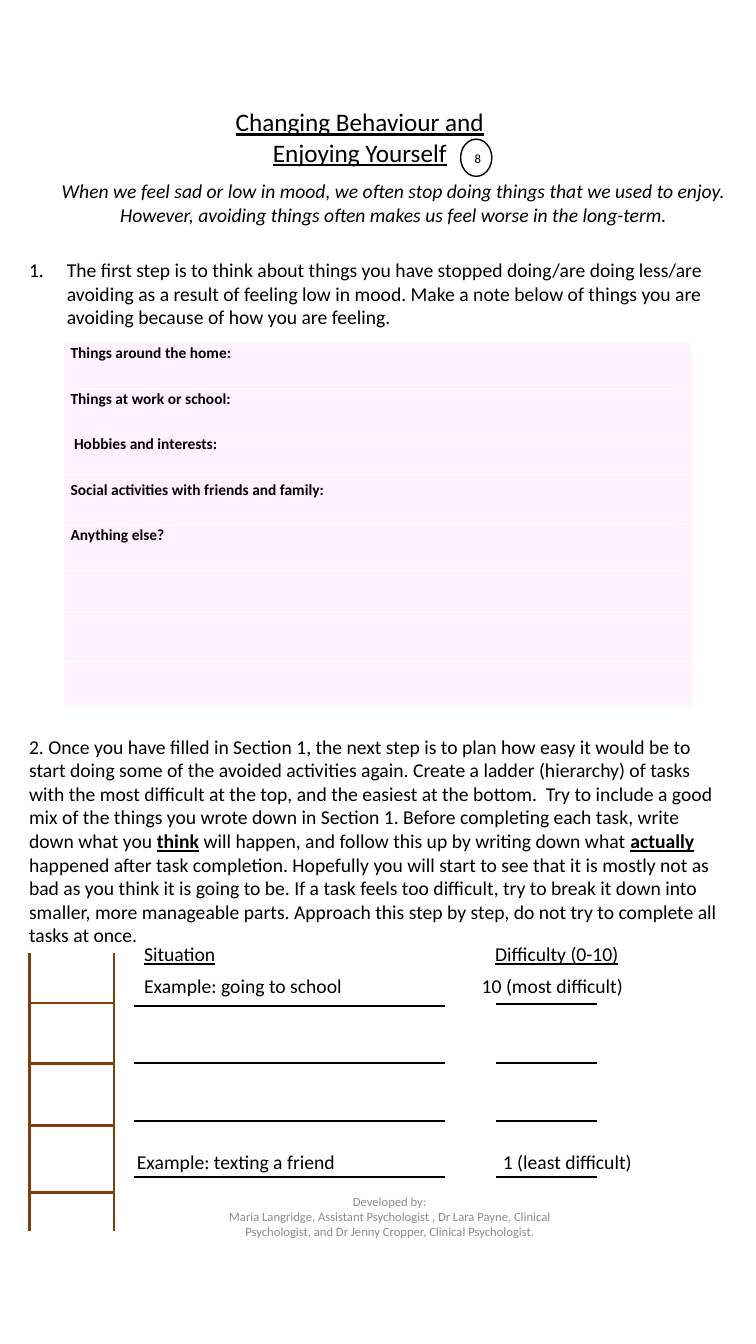
from lxml import etree
from pptx import Presentation
from pptx.dml.color import RGBColor
from pptx.enum import shapes, text
from pptx.oxml import ns
from pptx.util import Pt

BLACK = RGBColor(0x00, 0x00, 0x00)
GREY = RGBColor(0x8C, 0x8C, 0x8C)
BROWN = RGBColor(0x84, 0x3C, 0x0B)
PINK = RGBColor(0xFF, 0xCC, 0xFF)
CENTER = text.PP_ALIGN.CENTER

deck = Presentation()
deck.slide_width, deck.slide_height = Pt(540), Pt(960)
page = deck.slides.add_slide(deck.slide_layouts[6])


def add_text(left, top, width, height, lines, size=14, color=BLACK, align=None):
    box = page.shapes.add_textbox(Pt(left), Pt(top), Pt(width), Pt(height))
    frame = box.text_frame
    frame.word_wrap = True
    frame.text = lines
    for para in frame.paragraphs:
        para.alignment = align
        para.font.name = "Calibri"
        para.font.size = Pt(size)
        para.font.color.rgb = color
    return frame


def add_line(x1, y1, x2, y2, color, width):
    line = page.shapes.add_connector(
        shapes.MSO_CONNECTOR.STRAIGHT, Pt(x1), Pt(y1), Pt(x2), Pt(y2))
    line.line.color.rgb = color
    line.line.width = Pt(width)
    etree.SubElement(line._element.spPr, ns.qn("a:effectLst"))


# Title and introduction
title = add_text(133.9, 72.7, 246.2, 51, "Changing Behaviour and Enjoying Yourself",
                 size=18, align=CENTER)
title.paragraphs[0].font.underline = True
intro = add_text(
    24.5, 124.6, 513.4, 41,
    "When we feel sad or low in mood, we often stop doing things that we used to enjoy. "
    "However, avoiding things often makes us feel worse in the long-term.", align=CENTER)
intro.paragraphs[0].font.italic = True

# Circled page number
number = add_text(324.7, 93.6, 25.9, 39.6, "8", size=9, align=text.PP_ALIGN.RIGHT)
number.vertical_anchor = text.MSO_ANCHOR.MIDDLE
circle = page.shapes.add_shape(
    shapes.MSO_SHAPE.OVAL, Pt(329), Pt(99.4), Pt(22.3), Pt(26.6))
circle.shadow.inherit = False
circle.fill.background()
circle.line.color.rgb = BLACK
circle.line.width = Pt(1)

# Step 1, numbered
step_one = add_text(
    13.7, 180.7, 513.4, 80,
    "The first step is to think about things you have stopped doing/are doing less/are "
    "avoiding as a result of feeling low in mood. Make a note below of things you are "
    "avoiding because of how you are feeling.")
properties = step_one.paragraphs[0]._p.get_or_add_pPr()
properties.set("marL", str(Pt(27)))
properties.set("indent", str(Pt(-27)))
numbering = etree.Element(ns.qn("a:buAutoNum"), type="arabicPeriod")
properties.insert(0, numbering)

# Table of avoided activities
headings = ["Things around the home:", "Things at work or school:",
            " Hobbies and interests:", "Social activities with friends and family:",
            "Anything else?", "", "", ""]
table = page.shapes.add_table(
    len(headings), 1, Pt(45.4), Pt(244.8), Pt(448.6), Pt(32.5 * len(headings))).table
for row, heading in enumerate(headings):
    cell = table.cell(row, 0)
    cell.fill.solid()
    cell.fill.fore_color.rgb = PINK
    tint = cell._tc.tcPr.find(".//" + ns.qn("a:srgbClr"))
    etree.SubElement(tint, ns.qn("a:alpha"), val="26000")
    if heading:
        cell.margin_left = cell.margin_right = Pt(5)
        cell.margin_top = cell.margin_bottom = 0
        cell.text = heading
        para = cell.text_frame.paragraphs[0]
        para.line_spacing = 1.07
        para.font.name = "Calibri"
        para.font.size = Pt(11)
        para.font.bold = True
        para.font.color.rgb = BLACK

# Step 2, with stressed words
step_two = add_text(13.7, 521.3, 513.4, 181.4, "").paragraphs[0]
for words, stressed in [
    ("2. Once you have filled in Section 1, the next step is to plan how easy it would be to "
     "start doing some of the avoided activities again. Create a ladder (hierarchy) of tasks "
     "with the most difficult at the top, and the easiest at the bottom.  Try to include a "
     "good mix of the things you wrote down in Section 1. Before completing each task, write "
     "down what you ", False),
    ("think", True),
    (" will happen, and follow this up by writing down what ", False),
    ("actually", True),
    (" happened after task completion. Hopefully you will start to see that it is mostly not "
     "as bad as you think it is going to be. If a task feels too difficult, try to break it "
     "down into smaller, more manageable parts. Approach this step by step, do not try to "
     "complete all tasks at once.", False),
]:
    span = step_two.add_run()
    span.text = words
    if stressed:
        span.font.bold = span.font.underline = True

# Ladder
for rail in (20.9, 81.4):
    add_line(rail, 681, rail, 879, BROWN, 2)
for rung in (716.4, 759.6, 804.2, 851.8):
    add_line(81.4, rung, 20.9, rung, BROWN, 2)

# Writing lines for situation and difficulty
for left, right, first in ((95.8, 318.2, 718.6), (354.2, 426.2, 717.1)):
    for y in (first, 759.6, 800.6, 841):
        add_line(left, y, right, y, BLACK, 1.5)

# Column headings and examples
for left, top, width, words, underlined in [
    (95.8, 669.6, 222.5, "Situation", True),
    (346.6, 669.6, 121.7, "Difficulty (0-10)", True),
    (95.8, 691.9, 222.5, "Example: going to school", False),
    (337, 691.9, 121.7, "10 (most difficult)", False),
    (90.7, 817.9, 237.6, "Example: texting a friend", False),
    (352.1, 817.9, 121.7, "1 (least difficult)", False),
]:
    label = add_text(left, top, width, 24.5, words)
    label.paragraphs[0].font.underline = underlined

# Credits
credits = add_text(
    147.6, 843.1, 261.4, 51.1,
    "Developed by:\nMaria Langridge, Assistant Psychologist , Dr Lara Payne, Clinical "
    "Psychologist, and Dr Jenny Cropper, Clinical Psychologist.",
    size=9, color=GREY, align=CENTER)
credits.vertical_anchor = text.MSO_ANCHOR.MIDDLE

deck.save("out.pptx")
